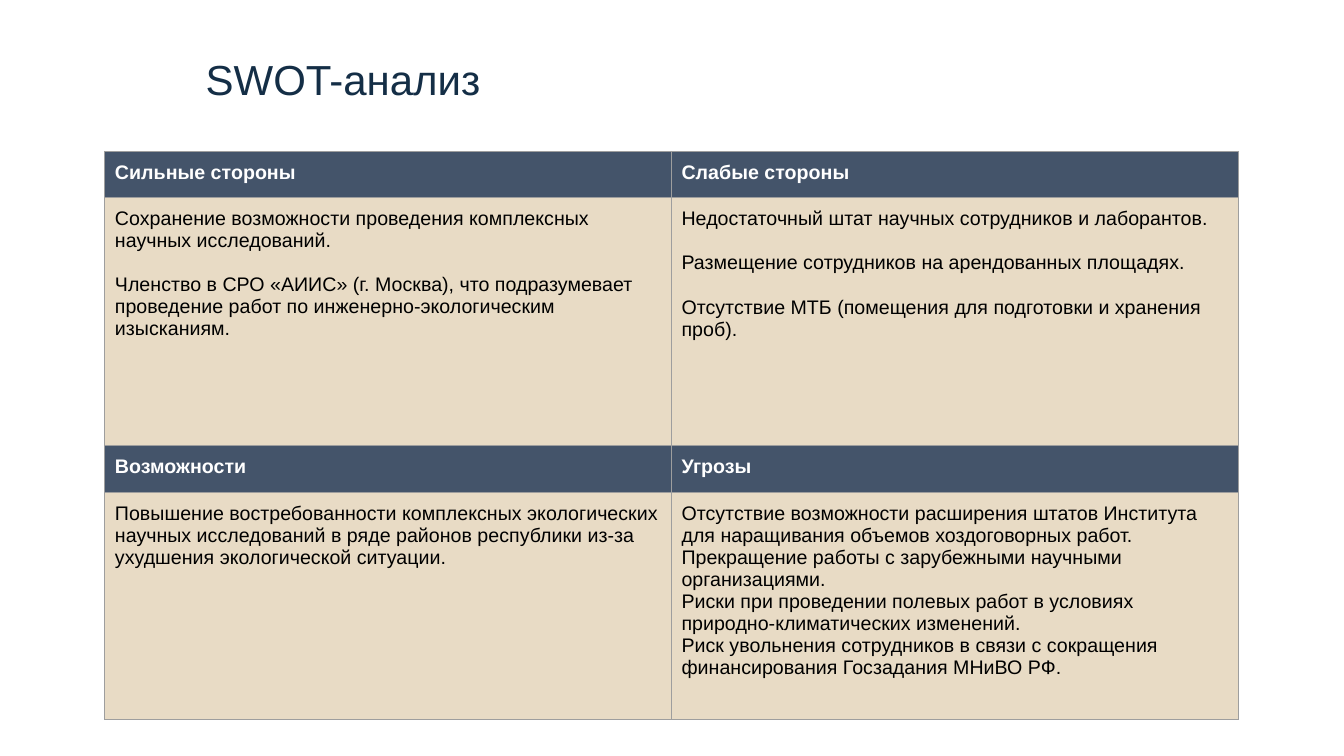
"""Build the SWOT analysis slide."""
from dataclasses import dataclass

import pptx
import pptx.dml.color
import pptx.enum.text
import pptx.oxml
import pptx.oxml.ns
import pptx.util
from pptx.util import Inches

COLORS = {
    "title": "142E46",
    "heading_fill": "44546A",
    "heading_text": "FFFFFF",
    "body_fill": "E8DBC5",
    "body_text": "000000",
    "border": "9E9E9E",
}
INSET = Inches(0.1)
COLUMN_WIDTH = 5.62
ROW_HEIGHTS = [0.46, 2.46, 0.47, 2.25]


@dataclass(frozen=True)
class Quadrant:
    """One SWOT section: its heading, points and the gap between points."""

    heading: str
    points: list[str]
    gap: float = 0


QUADRANTS = [
    Quadrant("Сильные стороны", [
        "Сохранение возможности проведения комплексных научных исследований.",
        "Членство в СРО «АИИС» (г. Москва), что подразумевает проведение работ "
        "по инженерно-экологическим изысканиям.",
    ], gap=16),
    Quadrant("Слабые стороны", [
        "Недостаточный штат научных сотрудников и лаборантов.",
        "Размещение сотрудников на арендованных площадях.",
        "Отсутствие МТБ (помещения для подготовки и хранения проб).",
    ], gap=16),
    Quadrant("Возможности", [
        "Повышение востребованности комплексных экологических научных исследований "
        "в ряде районов республики из-за ухудшения экологической ситуации.",
    ]),
    Quadrant("Угрозы", [
        "Отсутствие возможности расширения штатов Института для наращивания "
        "объемов хоздоговорных работ.",
        "Прекращение работы с зарубежными научными организациями.",
        "Риски при проведении полевых работ в условиях природно-климатических изменений.",
        "Риск увольнения сотрудников в связи с сокращения финансирования "
        "Госзадания МНиВО РФ.",
    ]),
]


def write_text(frame, paragraphs: list[str], *, color: str, size: float = 14,
               bold: bool = False, gap: float = 0) -> None:
    """Fill a text frame with left-aligned paragraphs in one format."""
    frame.word_wrap = True
    for index, text in enumerate(paragraphs):
        paragraph = frame.add_paragraph() if index else frame.paragraphs[0]
        paragraph.alignment = pptx.enum.text.PP_ALIGN.LEFT
        paragraph.space_before = pptx.util.Pt(gap if index else 0)
        run = paragraph.add_run()
        run.text = text
        run.font.name = "Arial"
        run.font.size = pptx.util.Pt(size)
        run.font.bold = bold
        run.font.color.rgb = pptx.dml.color.RGBColor.from_string(COLORS[color])


def set_insets(box) -> None:
    """Give a cell or text frame equal insets on all sides."""
    box.margin_left = box.margin_right = INSET
    box.margin_top = box.margin_bottom = INSET


def style_cell(cell, fill: str) -> None:
    """Set the insets, borders and fill of a table cell."""
    set_insets(cell)
    properties = cell._tc.get_or_add_tcPr()
    for side in "LRTB":
        properties.append(pptx.oxml.parse_xml(
            f'<a:ln{side} {pptx.oxml.ns.nsdecls("a")} w="{pptx.util.Pt(0.75)}">'
            f'<a:solidFill><a:srgbClr val="{COLORS["border"]}"/></a:solidFill>'
            f'</a:ln{side}>'))
    cell.fill.solid()
    cell.fill.fore_color.rgb = pptx.dml.color.RGBColor.from_string(COLORS[fill])


def add_title(slide, text: str) -> None:
    """Place and format the slide title."""
    title = slide.shapes.title
    title.left, title.top = Inches(1.94), Inches(0.43)
    title.width, title.height = Inches(9.93), Inches(0.71)
    frame = title.text_frame
    set_insets(frame)
    frame.auto_size = pptx.enum.text.MSO_AUTO_SIZE.NONE
    frame.vertical_anchor = pptx.enum.text.MSO_ANCHOR.TOP
    write_text(frame, [text], color="title", size=30)


def add_swot_table(slide, quadrants: list[Quadrant]) -> None:
    """Lay out the quadrants two by two, each as a heading above its points."""
    swot = slide.shapes.add_table(
        len(ROW_HEIGHTS), 2, Inches(1.04), Inches(1.5),
        Inches(2 * COLUMN_WIDTH), Inches(sum(ROW_HEIGHTS))).table
    swot.first_row = swot.horz_banding = False
    for column in swot.columns:
        column.width = Inches(COLUMN_WIDTH)
    for row, height in zip(swot.rows, ROW_HEIGHTS):
        row.height = Inches(height)
    for index, quadrant in enumerate(quadrants):
        band, column = divmod(index, 2)
        heading, body = swot.cell(2 * band, column), swot.cell(2 * band + 1, column)
        style_cell(heading, "heading_fill")
        write_text(heading.text_frame, [quadrant.heading], color="heading_text", bold=True)
        style_cell(body, "body_fill")
        write_text(body.text_frame, quadrant.points, color="body_text", gap=quadrant.gap)


def main() -> None:
    """Create and save the presentation."""
    presentation = pptx.Presentation()
    presentation.slide_width, presentation.slide_height = Inches(13.33), Inches(7.5)
    slide = presentation.slides.add_slide(presentation.slide_layouts[5])
    add_title(slide, "SWOT-анализ")
    add_swot_table(slide, QUADRANTS)
    presentation.save("out.pptx")


if __name__ == "__main__":
    main()
